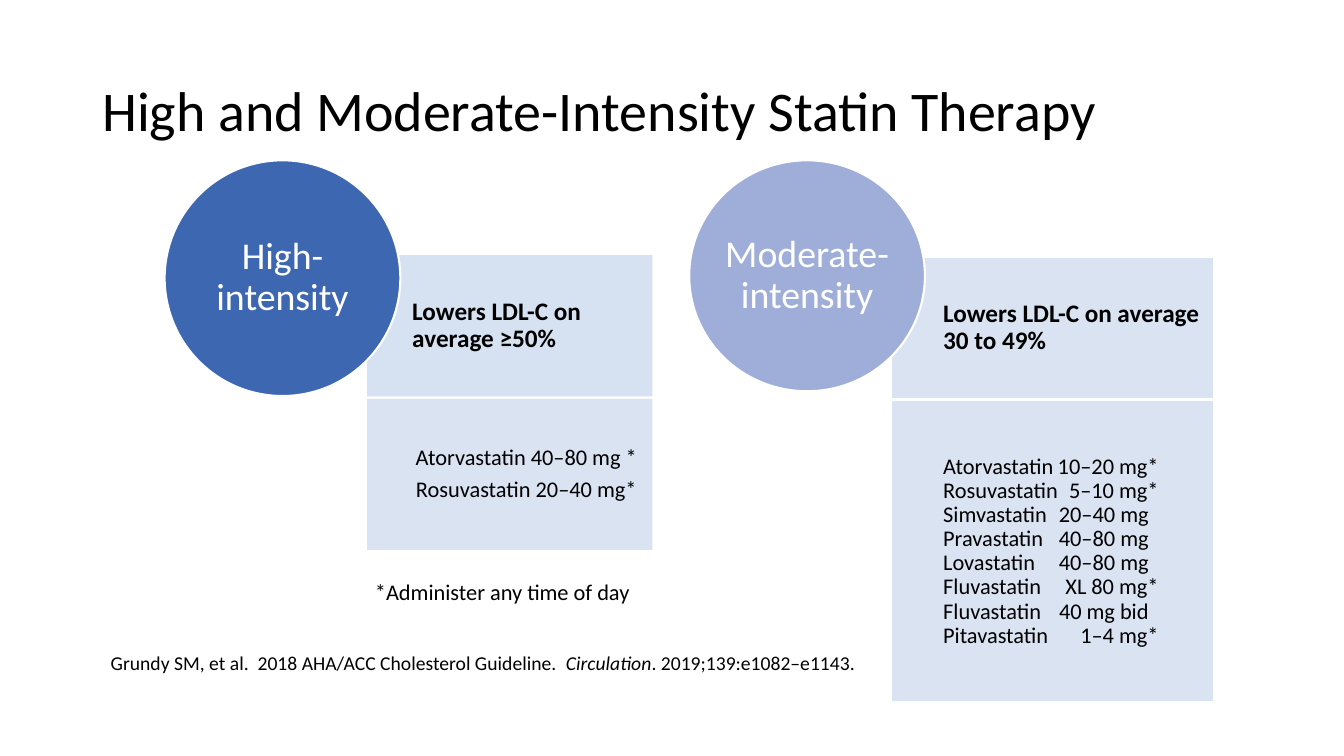
from lxml.etree import SubElement
from pptx import Presentation
from pptx.dml.color import RGBColor
from pptx.enum.shapes import MSO_SHAPE as Shape
from pptx.enum.text import MSO_ANCHOR as Anchor, PP_ALIGN as Align
from pptx.oxml.ns import qn
from pptx.util import Cm, Pt

FONT = "Calibri"
BLACK, WHITE = "000000", "FFFFFF"
PANEL = "D6E1F1"
STAR = 0.25  # room a trailing asterisk takes, in cm


def color(hex_code):
    return RGBColor.from_string(hex_code)


def set_alpha(fill, percent):
    SubElement(fill._xPr.find(".//" + qn("a:srgbClr")),
               qn("a:alpha"), val=str(percent * 1000))


def set_right_tab(paragraph, position):
    tabs = SubElement(paragraph._p.get_or_add_pPr(), qn("a:tabLst"))
    SubElement(tabs, qn("a:tab"), pos=str(Cm(position)), algn="r")


def set_frame(frame, margins, anchor, wrap=True):
    frame.word_wrap = wrap
    frame.vertical_anchor = anchor
    (frame.margin_left, frame.margin_top,
     frame.margin_right, frame.margin_bottom) = [Cm(m) for m in margins]


def write(frame, lines, size, ink=BLACK, align=Align.LEFT, bold=False,
          spacing=0.9, after=0):
    """Each line is a list of (text, italic) runs."""
    for index, runs in enumerate(lines):
        paragraph = frame.paragraphs[0] if index == 0 else frame.add_paragraph()
        paragraph.alignment = align
        paragraph.line_spacing = spacing
        paragraph.space_after = Pt(after)
        for text, italic in runs:
            run = paragraph.add_run()
            run.text = text
            font = run.font
            font.name, font.size = FONT, Pt(size)
            font.bold, font.italic = bold, italic
            font.color.rgb = color(ink)


def add_block(slide, preset, box, fill, alpha=100, outline=0):
    block = slide.shapes.add_shape(preset, *[Cm(v) for v in box])
    block.shadow.inherit = False
    block.fill.solid()
    block.fill.fore_color.rgb = color(fill)
    if alpha < 100:
        set_alpha(block.fill, alpha)
    if outline:
        block.line.color.rgb = color(WHITE)
        block.line.width = Pt(outline)
    else:
        block.line.fill.background()
    return block.text_frame


def add_note(slide, box, lines, size, anchor=Anchor.TOP, wrap=True, spacing=1.0):
    frame = slide.shapes.add_textbox(*[Cm(v) for v in box]).text_frame
    set_frame(frame, (0.25, 0.13, 0.25, 0.13), anchor, wrap)
    write(frame, lines, size, spacing=spacing)


def add_therapy(slide, box, name, circle_fill, circle_height, effect, doses,
                panel_top, dose_height, indent, effect_alpha, outline,
                dose_align=Align.LEFT, dose_after=0, dose_tab=None):
    """Effect and dose panels, with the intensity circle over their corner."""
    left, top, width = box
    circle_width, panel_shift = 5.94, 5.1
    effect_height, gap = 3.56, 0.06
    panel_left, panel_width = left + panel_shift, width - panel_shift
    effect_top = top + panel_top

    # Effect on LDL-C
    panel = add_block(slide, Shape.RECTANGLE,
                      (panel_left, effect_top, panel_width, effect_height),
                      PANEL, effect_alpha, outline)
    set_frame(panel, (indent, 0.36, 0.36, 0.36), Anchor.MIDDLE)
    write(panel, [[(effect, False)]], 18, bold=True)

    # Drugs and doses
    dose_top = effect_top + effect_height + gap
    panel = add_block(slide, Shape.RECTANGLE,
                      (panel_left, dose_top, panel_width, dose_height),
                      PANEL, 90, outline)
    set_frame(panel, (indent, 0.3, 0.3, 0.3), Anchor.MIDDLE)
    write(panel, [[(dose, False)] for dose in doses], 16,
          align=dose_align, after=dose_after)
    if dose_tab:
        for paragraph, dose in zip(panel.paragraphs, doses):
            set_right_tab(paragraph, dose_tab + STAR * dose.endswith("*"))

    # Intensity circle
    circle = add_block(slide, Shape.OVAL, (left, top, circle_width, circle_height),
                       circle_fill, outline=1.5)
    set_frame(circle, (0, 0, 0, 0), Anchor.MIDDLE)
    write(circle, [[(name, False)]], 27, WHITE, Align.CENTER)


def main():
    deck = Presentation()
    deck.slide_width, deck.slide_height = Cm(33.87), Cm(19.05)
    slide = deck.slides.add_slide(deck.slide_layouts[6])

    # Title
    add_note(slide, (2.33, 1.01, 29.21, 3.68),
             [[("High and Moderate-Intensity Statin Therapy", False)]],
             40, Anchor.MIDDLE, spacing=0.9)

    # Therapies
    add_therapy(slide, (4.15, 4.04, 12.29), "High-intensity", "3E67B2", 5.94,
                "Lowers LDL-C on average ≥50%",
                ["Atorvastatin 40–80 mg *", "Rosuvastatin 20–40 mg*"],
                panel_top=2.39, dose_height=3.81, indent=1.14,
                effect_alpha=100, outline=0,
                dose_align=Align.CENTER, dose_after=5.6)
    add_therapy(slide, (17.37, 4.04, 13.23), "Moderate-intensity", "9FAED8", 5.82,
                "Lowers LDL-C on average 30 to 49%",
                ["Atorvastatin\t10–20 mg*", "Rosuvastatin\t5–10 mg*",
                 "Simvastatin\t20–40 mg", "Pravastatin\t40–80 mg",
                 "Lovastatin\t40–80 mg", "Fluvastatin\tXL 80 mg*",
                 "Fluvastatin\t40 mg bid", "Pitavastatin\t1–4 mg*"],
                panel_top=2.44, dose_height=7.59, indent=1.3,
                effect_alpha=90, outline=1, dose_tab=5.18)

    # Citation and footnote
    add_note(slide, (2.54, 16.26, 27.53, 0.86),
             [[("Grundy SM, et al.  2018 AHA/ACC Cholesterol Guideline.  ", False),
               ("Circulation", True), (". 2019;139:e1082–e1143.", False)]], 14)
    add_note(slide, (9.2, 14.43, 7.01, 0.94),
             [[("*Administer any time of day", False)]], 16, wrap=False)

    deck.save("out.pptx")


if __name__ == "__main__":
    main()
